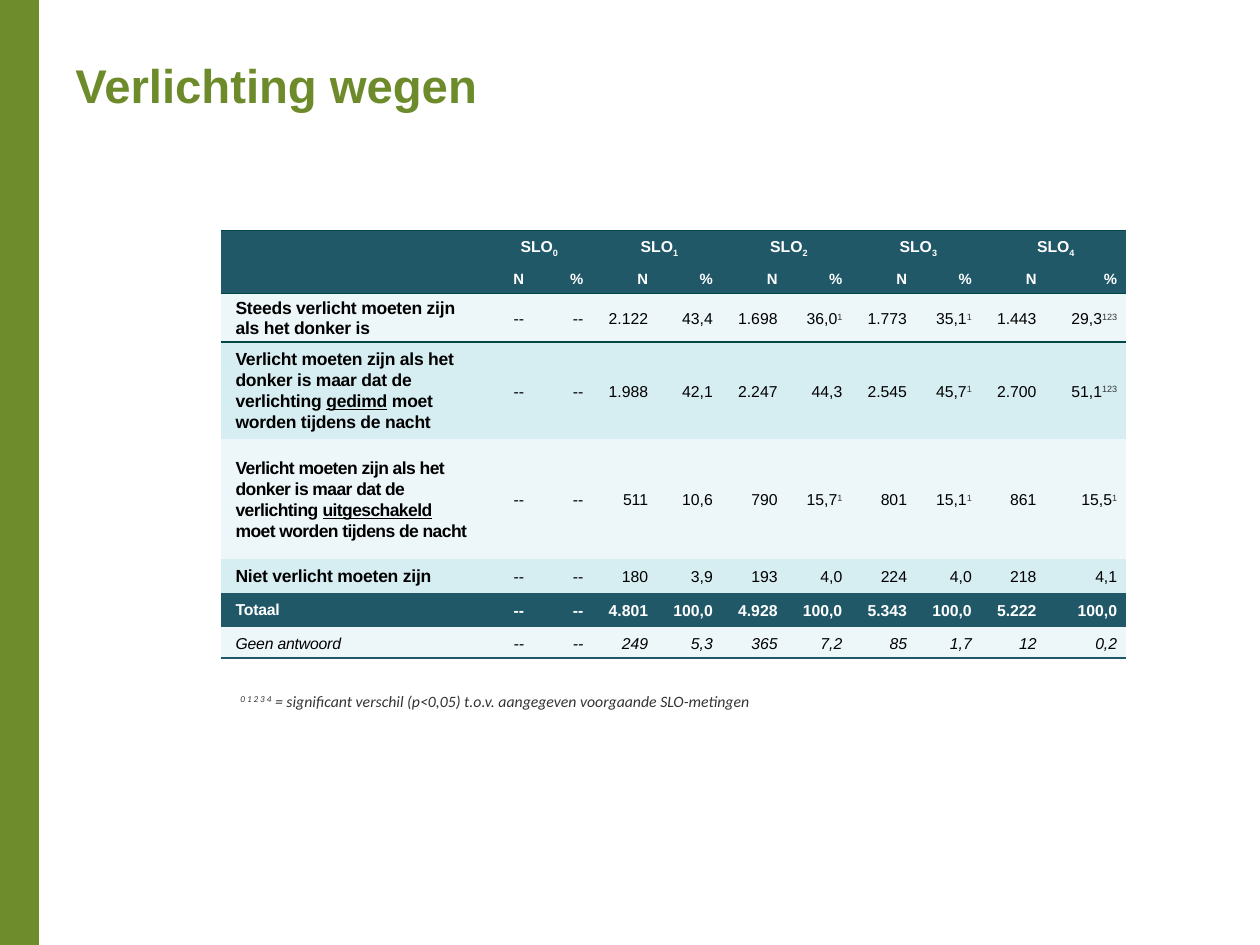
from lxml import etree
from pptx import Presentation
from pptx.dml.color import RGBColor
from pptx.enum.shapes import MSO_SHAPE
from pptx.enum.text import MSO_ANCHOR, MSO_AUTO_SIZE, PP_ALIGN
from pptx.oxml.ns import qn
from pptx.util import Inches, Pt

RECT = MSO_SHAPE.RECTANGLE
MIDDLE = MSO_ANCHOR.MIDDLE
LEFT, CENTER, RIGHT, JUSTIFY = PP_ALIGN.LEFT, PP_ALIGN.CENTER, PP_ALIGN.RIGHT, PP_ALIGN.JUSTIFY
FIT = MSO_AUTO_SIZE.SHAPE_TO_FIT_TEXT

GREEN = RGBColor(0x6E, 0x8C, 0x2B)
TITLE_GREEN = RGBColor(0x6D, 0x8B, 0x2B)
TEAL = RGBColor(0x21, 0x58, 0x68)
DARK_TEAL = RGBColor(0x00, 0x46, 0x44)
PALE = RGBColor(0xED, 0xF7, 0xF9)
LIGHT = RGBColor(0xD6, 0xED, 0xF2)
WHITE = RGBColor(0xFF, 0xFF, 0xFF)
BLACK = RGBColor(0x00, 0x00, 0x00)
GRAY = RGBColor(0x33, 0x33, 0x33)

SUB, SUP, UNDERLINE = {"baseline": "-25000"}, {"baseline": "30000"}, {"u": "sng"}


def write(p, text, size, color, bold=False, italic=False, marked=SUP, spacing=0, font="Arial"):
    for i, part in enumerate(text.split("|")):
        if not part:
            continue
        r = p.add_run()
        r.text = part
        r.font.name = font
        r.font.size = Pt(size)
        r.font.bold = bold
        r.font.italic = italic
        r.font.color.rgb = GRAY if i % 2 and marked is SUP else color
        rPr = r.font._element
        if spacing:
            rPr.set("spc", str(spacing))
        if i % 2:
            for name, value in marked.items():
                rPr.set(name, value)


def border(cell, side, color):
    ln = etree.Element(qn("a:" + side), w=str(Pt(1)))
    fill = etree.SubElement(ln, qn("a:solidFill"))
    etree.SubElement(fill, qn("a:srgbClr"), val=str(color))
    cell._tc.get_or_add_tcPr().insert(0, ln)


prs = Presentation()
prs.slide_width, prs.slide_height = Inches(10), Inches(7.5)
W, H = prs.slide_width, prs.slide_height
U = W // 100
s = prs.slides.add_slide(prs.slide_layouts[6])

bar = s.shapes.add_shape(RECT, 0, 0, int(3.1 * U), H)
bar.shadow.inherit = False
bar.fill.solid()
bar.fill.fore_color.rgb = GREEN
bar.line.fill.background()

title = s.shapes.add_textbox(5 * U, 4 * U, int(34.2 * U), int(5.6 * U))
tf = title.text_frame
tf.word_wrap = False
tf.auto_size = FIT
write(tf.paragraphs[0], "Verlichting wegen", 27, TITLE_GREEN, bold=True)

cols = [20.7, 4.1, 4.7] + [5.14] * 7 + [6.4]
heights = [2.7, 2.3, 3.85, 7.7, 9.5, 2.7, 2.7, 2.5]
rows = [
    [""] + [t for n in range(5) for t in (f"SLO|{n}", "")],
    [""] + ["N", "%"] * 5,
    ["Steeds verlicht moeten zijn als het donker is", "--", "--", "2.122", "43,4",
     "1.698", "36,0|1", "1.773", "35,1|1", "1.443", "29,3|123"],
    ["Verlicht moeten zijn als het donker is maar dat de verlichting |gedimd| moet worden tijdens de nacht",
     "--", "--", "1.988", "42,1", "2.247", "44,3", "2.545", "45,7|1", "2.700", "51,1|123"],
    ["Verlicht moeten zijn als het donker is maar dat de verlichting |uitgeschakeld| moet worden tijdens de nacht",
     "--", "--", "511", "10,6", "790", "15,7|1", "801", "15,1|1", "861", "15,5|1"],
    ["Niet verlicht moeten zijn", "--", "--", "180", "3,9", "193", "4,0", "224", "4,0", "218", "4,1"],
    ["Totaal", "--", "--", "4.801", "100,0", "4.928", "100,0", "5.343", "100,0", "5.222", "100,0"],
    ["Geen antwoord", "--", "--", "249", "5,3", "365", "7,2", "85", "1,7", "12", "0,2"],
]
fills = [TEAL, TEAL, PALE, LIGHT, PALE, LIGHT, TEAL, PALE]
borders = {0: ("lnT", DARK_TEAL), 1: ("lnB", DARK_TEAL), 2: ("lnT", DARK_TEAL), 7: ("lnB", TEAL)}
TOTAL, NO_ANSWER = 6, 7

frame = s.shapes.add_table(len(rows), len(cols), int(17.5 * U), int(18.3 * U),
                           int(sum(cols) * U), int(sum(heights) * U))
table = frame.table
table.first_row = table.horz_banding = False
table._tbl.tblPr.find(qn("a:tableStyleId")).text = "{2D5ABB26-0587-4C30-8999-92F81FD0307C}"
for column, width in zip(table.columns, cols):
    column.width = int(width * U)
for row, height in zip(table.rows, heights):
    row.height = int(height * U)
for c in range(1, len(cols), 2):
    table.cell(0, c).merge(table.cell(0, c + 1))

for i, row in enumerate(rows):
    for j, text in enumerate(row):
        cell = table.cell(i, j)
        cell.fill.solid()
        cell.fill.fore_color.rgb = fills[i]
        cell.vertical_anchor = MIDDLE
        cell.margin_left = cell.margin_right = int(0.7 * U)
        cell.margin_top = cell.margin_bottom = 0
        if i in borders:
            border(cell, *borders[i])
        p = cell.text_frame.paragraphs[0]
        if not text:
            p._p.get_or_add_endParaRPr().set("sz", "900")
            continue
        label, header = j == 0, i < 2
        p.alignment = LEFT if label else CENTER if i == 0 else RIGHT
        if i != 1 and not (label and i == TOTAL):
            p.line_spacing = Pt(12)
        if label or header:
            p._p.get_or_add_pPr().set("marL", str(U // 2))
            p._p.get_or_add_pPr().set("indent", str(-U // 10 if header else 0))
        write(p, text,
              size=8.5 if i == 1 else 10 if label and i < TOTAL else 9,
              color=WHITE if fills[i] == TEAL else BLACK,
              bold=header or i == TOTAL or (label and i < TOTAL),
              italic=i == NO_ANSWER,
              marked=SUB if header else UNDERLINE if label else SUP,
              spacing=(-30 if i == 4 else -10) if label else 0)

note = s.shapes.add_textbox(int(18.1 * U), int(54.4 * U), int(48.2 * U), int(2.5 * U))
tf = note.text_frame
tf.word_wrap = True
tf.auto_size = FIT
tf.vertical_anchor = MIDDLE
p = tf.paragraphs[0]
p.alignment = JUSTIFY
write(p, "|0 1 2 3 4| = significant verschil (p<0,05) t.o.v. aangegeven voorgaande SLO-metingen",
      9, GRAY, italic=True, font="Calibri")

prs.save("out.pptx")
